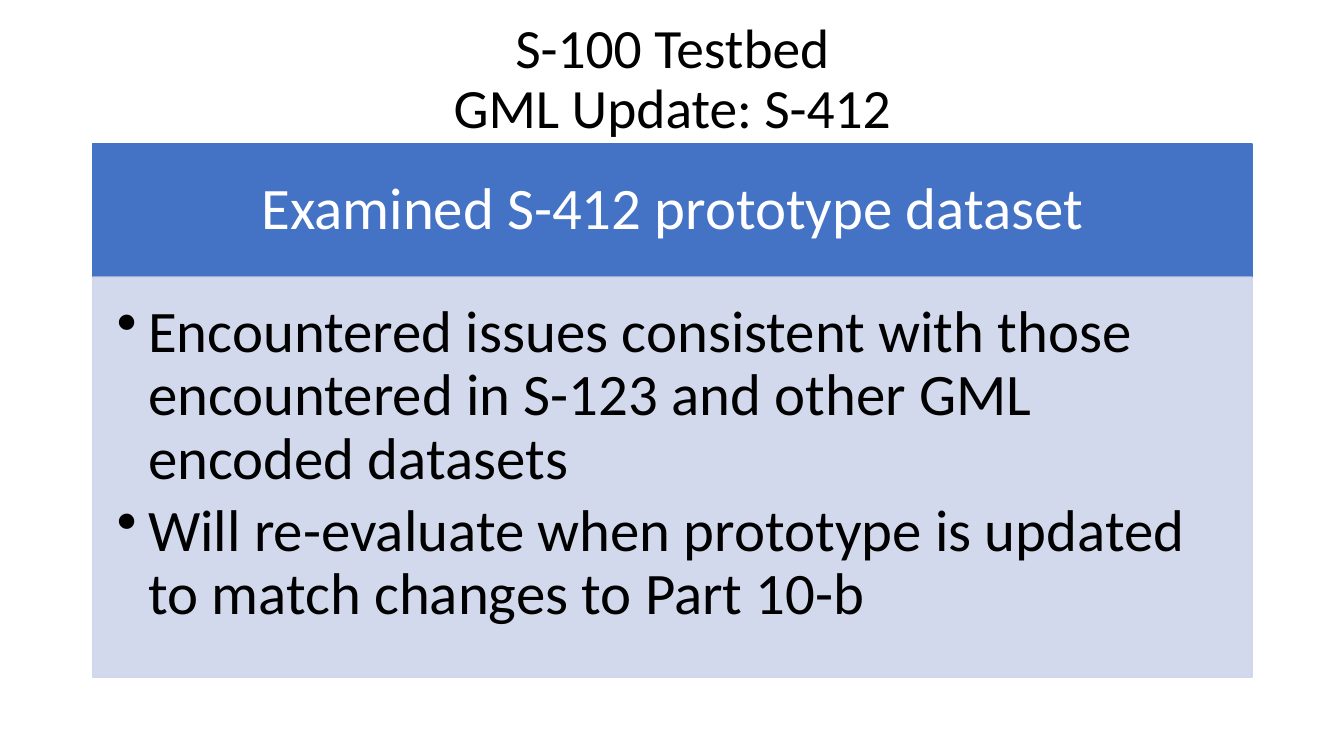
import pptx
import pptx.dml.color
import pptx.enum.shapes
import pptx.enum.text
import pptx.oxml
import pptx.oxml.ns
import pptx.util

Inches = pptx.util.Inches
Pt = pptx.util.Pt
RGBColor = pptx.dml.color.RGBColor
Align = pptx.enum.text.PP_ALIGN
Anchor = pptx.enum.text.MSO_ANCHOR

BLUE = RGBColor(0x44, 0x72, 0xC4)
PALE_BLUE = RGBColor(0xCF, 0xD5, 0xEA)
WHITE = RGBColor(0xFF, 0xFF, 0xFF)
BLACK = RGBColor(0x00, 0x00, 0x00)

LEFT, WIDTH = 0.92, 11.5
HEADER_TOP, HEADER_HEIGHT, FINDINGS_HEIGHT = 1.43, 1.32, 3.97


def write_text(frame, text, *, font="Calibri", size=42, color=BLACK, align=Align.LEFT,
               anchor=Anchor.TOP, insets=(0.1, 0.05, 0.1, 0.05), after=0, bullet_indent=None):
    """Fill a text frame: one paragraph per line, "\v" breaks a line inside one."""
    frame.word_wrap = True
    frame.vertical_anchor = anchor
    (frame.margin_left, frame.margin_top,
     frame.margin_right, frame.margin_bottom) = map(Inches, insets)
    frame.text = text
    for paragraph in frame.paragraphs:
        paragraph.alignment = align
        paragraph.line_spacing = 0.9
        paragraph.space_after = Pt(after)
        if bullet_indent:
            properties = paragraph._p.get_or_add_pPr()
            properties.set("marL", str(Inches(bullet_indent)))
            properties.set("indent", str(-Inches(bullet_indent)))
            bullet = pptx.oxml.parse_xml(
                f'<a:buChar {pptx.oxml.ns.nsdecls("a")} char="•"/>')
            properties.append(bullet)
        for run in paragraph.runs:
            run.font.name = font
            run.font.size = Pt(size)
            run.font.color.rgb = color


class SlideBuilder:
    def __init__(self, slide, font):
        self.slide = slide
        self.font = font

    def title(self, text, left, top, width, height, **style):
        box = self.slide.shapes.add_textbox(*map(Inches, (left, top, width, height)))
        write_text(box.text_frame, text, font=self.font, **style)

    def panel(self, text, left, top, width, height, fill, opacity=100, **style):
        panel = self.slide.shapes.add_shape(
            pptx.enum.shapes.MSO_SHAPE.RECTANGLE, *map(Inches, (left, top, width, height)))
        panel.shadow.inherit = False
        panel.line.width = Pt(1)
        for paint in (panel.fill, panel.line.fill):
            paint.solid()
            paint.fore_color.rgb = fill
        if opacity < 100:
            for tint in panel._element.spPr.iter(pptx.oxml.ns.qn("a:srgbClr")):
                tint.append(pptx.oxml.parse_xml(
                    f'<a:alpha {pptx.oxml.ns.nsdecls("a")} val="{opacity * 1000}"/>'))
        write_text(panel.text_frame, text, font=self.font, **style)


def main():
    deck = pptx.Presentation()
    deck.slide_width, deck.slide_height = Inches(13.33), Inches(7.5)
    builder = SlideBuilder(deck.slides.add_slide(deck.slide_layouts[6]), "Calibri")

    # Header band
    builder.panel("Examined S-412 prototype dataset",
                  LEFT, HEADER_TOP, WIDTH, HEADER_HEIGHT, BLUE,
                  color=WHITE, align=Align.CENTER, anchor=Anchor.MIDDLE,
                  insets=(0.33, 0.19, 0.33, 0.19))

    # Findings
    findings = (
        "Encountered issues consistent with those encountered in S-123 "
        "and other GML encoded datasets",
        "Will re-evaluate when prototype is updated to match changes to Part 10-b",
    )
    builder.panel("\n".join(findings),
                  LEFT, HEADER_TOP + HEADER_HEIGHT, WIDTH, FINDINGS_HEIGHT, PALE_BLUE,
                  opacity=90, insets=(0.24, 0.24, 0.33, 0.37), after=6.3, bullet_indent=0.31)

    # Title
    builder.title("S-100 Testbed\vGML Update: S-412", LEFT, 0.4, WIDTH, 0.79,
                  size=39.6, align=Align.CENTER, anchor=Anchor.MIDDLE)

    deck.save("out.pptx")


if __name__ == "__main__":
    main()
